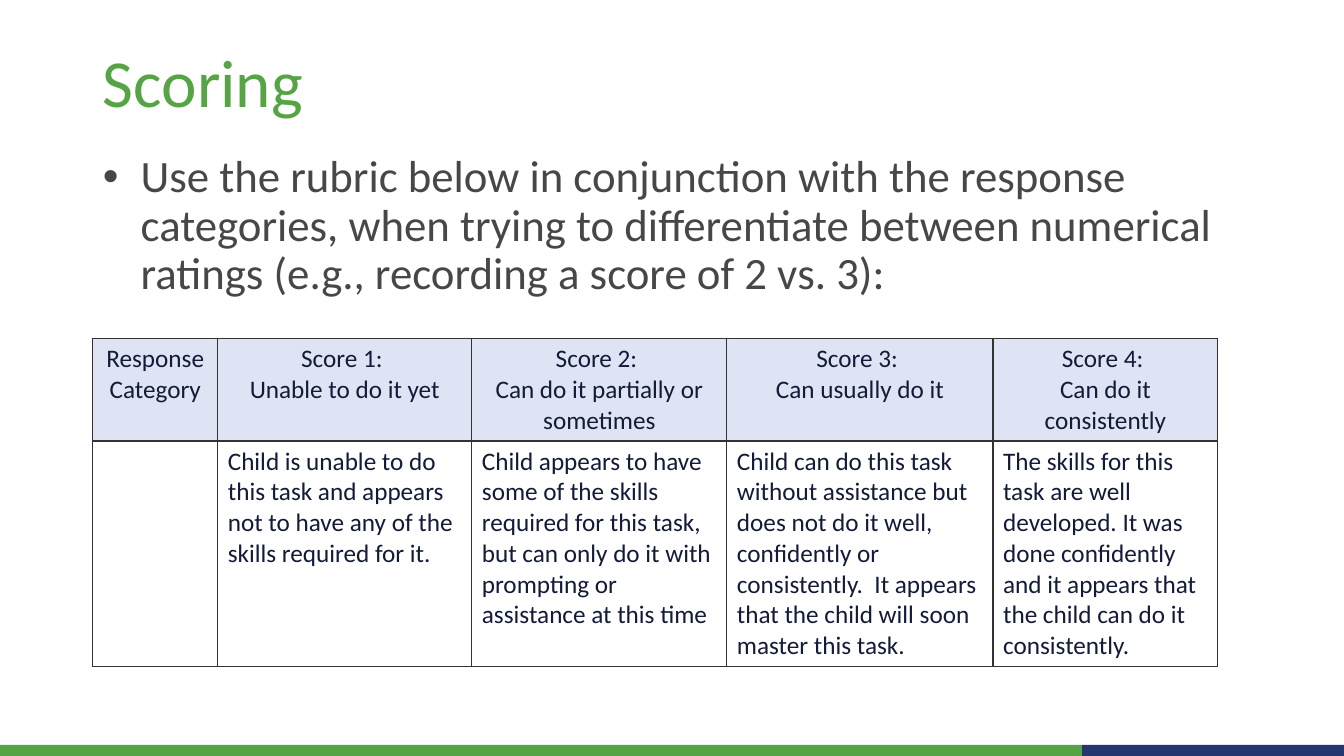
from lxml import etree
from pptx import Presentation
from pptx import util as u
from pptx.dml.color import RGBColor
from pptx.enum import shapes, text
from pptx.oxml import ns

GREEN, NAVY, GREY = "57A445", "243670", "474747"
INK, PALE, RULE = "121B38", "DFE4F5", "333333"

HEADS = [
    "Response Category",
    "Score 1: \nUnable to do it yet",
    "Score 2: \nCan do it partially or sometimes",
    "Score 3: \nCan usually do it",
    "Score 4: \nCan do it consistently",
]
NOTES = [
    "",
    "Child is unable to do this task and appears not to have any of the skills required for it.",
    "Child appears to have some of the skills required for this task, but can only do it with "
    "prompting or assistance at this time",
    "Child can do this task without assistance but does not do it well, confidently or "
    "consistently.  It appears that the child will soon master this task.",
    "The skills for this task are well developed. It was done confidently and it appears that "
    "the child can do it consistently.",
]


def color(code):
    return RGBColor.from_string(code)


def write(frame, words, size, ink, font="Calibri", align=text.PP_ALIGN.LEFT, line=1.0, before=0):
    frame.text = words
    for para in frame.paragraphs:
        para.alignment = align
        para.line_spacing = line
        para.space_before = u.Pt(before)
        para.font.size = u.Pt(size)
        para.font.name = font
        para.font.color.rgb = color(ink)


def edge(cell, ink, width):
    """Draw all four borders of a table cell."""
    props = cell._tc.get_or_add_tcPr()
    for at, side in enumerate(("lnL", "lnR", "lnT", "lnB")):
        line = etree.Element(ns.qn("a:" + side), w=str(u.Pt(width)))
        fill = etree.SubElement(line, ns.qn("a:solidFill"))
        etree.SubElement(fill, ns.qn("a:srgbClr"), val=ink)
        props.insert(at, line)


class Deck:
    def __init__(self):
        self.prs = Presentation()
        self.prs.slide_width = u.Inches(13.33)
        self.prs.slide_height = u.Inches(7.5)
        self.slide = self.prs.slides.add_slide(self.prs.slide_layouts[1])

    def bar(self, left, width, fill):
        box = self.slide.shapes.add_shape(
            shapes.MSO_SHAPE.RECTANGLE,
            u.Inches(left), u.Inches(7.39), u.Inches(width), u.Inches(0.11))
        box.shadow.inherit = False
        box.fill.solid()
        box.fill.fore_color.rgb = color(fill)
        box.line.fill.background()

    def holder(self, index, top, height, words, size, ink):
        """Place and fill one of the layout's placeholders."""
        box = self.slide.placeholders[index]
        box.left, box.top = u.Inches(0.92), u.Inches(top)
        box.width, box.height = u.Inches(11.5), u.Inches(height)
        frame = box.text_frame
        frame.word_wrap = True
        frame.auto_size = text.MSO_AUTO_SIZE.NONE
        frame.vertical_anchor = text.MSO_ANCHOR.TOP
        props = frame.paragraphs[0]._p.get_or_add_pPr()
        props.set("marL", "0")
        props.set("indent", "0")
        etree.SubElement(props, ns.qn("a:buNone"))
        write(frame, words, size, ink, line=0.9)

    def table(self, left, top, width, height, cols, rows, cells):
        frame = self.slide.shapes.add_table(
            len(rows), len(cols),
            u.Inches(left), u.Inches(top), u.Inches(width), u.Inches(height))
        grid = frame.table
        for col, size in zip(grid.columns, cols):
            col.width = u.Inches(size)
        for row, size in zip(grid.rows, rows):
            row.height = u.Inches(size)
        frame.height = u.Inches(height)
        grid.first_row = grid.horz_banding = False
        for r, line in enumerate(cells):
            for c, words in enumerate(line):
                cell = grid.cell(r, c)
                if r == 0:
                    cell.fill.solid()
                    cell.fill.fore_color.rgb = color(PALE)
                else:
                    cell.fill.background()
                edge(cell, RULE, 1)
                align = text.PP_ALIGN.LEFT if r else text.PP_ALIGN.CENTER
                write(cell.text_frame, words, 18, INK, align=align)


def main():
    deck = Deck()
    for left, width, fill in ((10.73, 1.3, NAVY), (12.03, 1.3, NAVY), (0, 10.73, GREEN)):
        deck.bar(left, width, fill)
    deck.holder(0, 0.44, 1.45, "Scoring", 48, GREEN)
    deck.holder(
        1, 1.48, 4.76,
        "Use the rubric below in conjunction with the response categories, when trying to "
        "differentiate between numerical ratings (e.g., recording a score of 2 vs. 3):",
        32, GREY)
    deck.table(0.92, 3.36, 11.17, 3.2, (1.24, 2.52, 2.53, 2.64, 2.23), (0.85, 1.61),
               (HEADS, NOTES))
    deck.prs.save("out.pptx")


if __name__ == "__main__":
    main()
